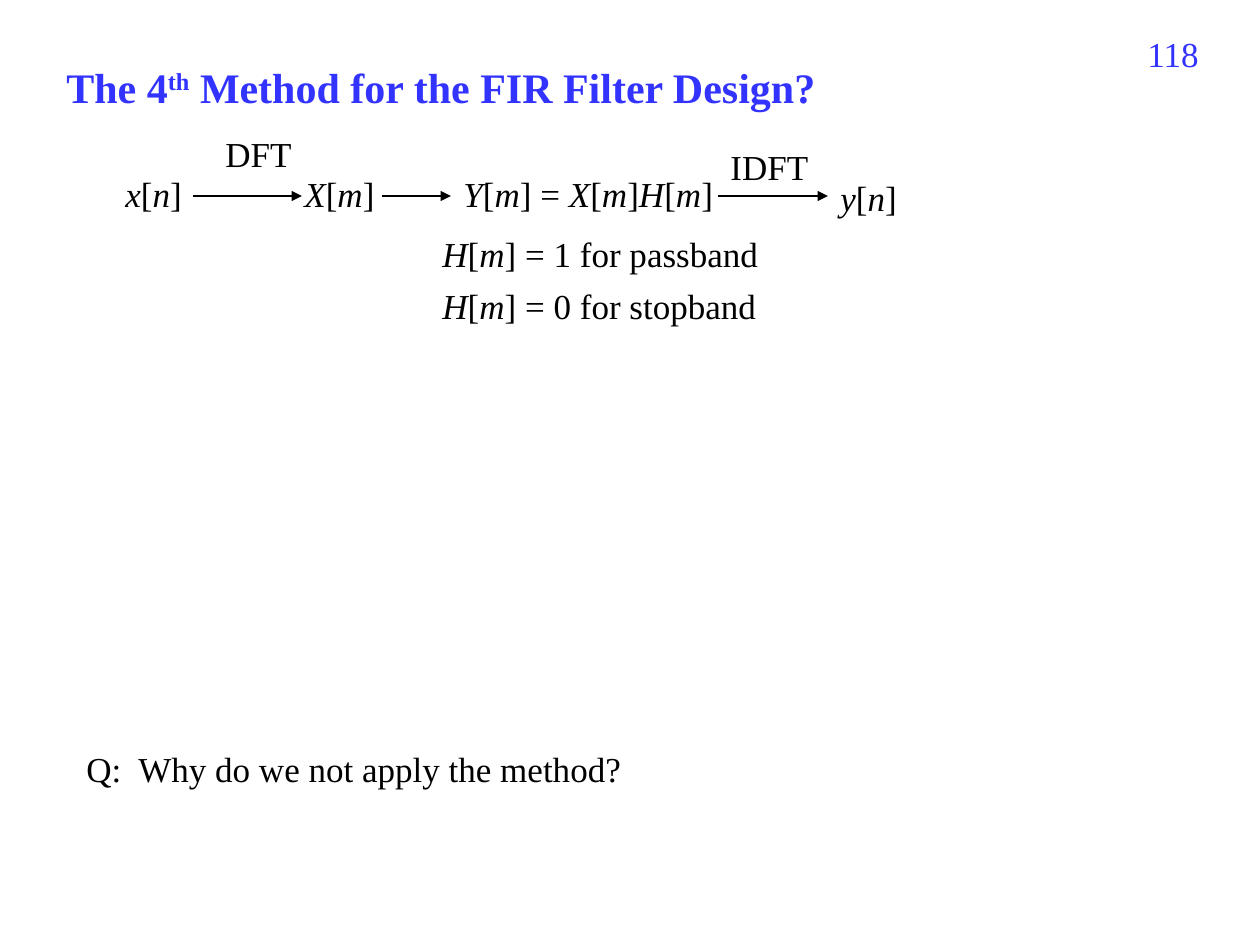
from lxml import etree
from pptx import Presentation
from pptx import util as u
from pptx.dml.color import RGBColor
from pptx.enum import shapes, text
from pptx.oxml.ns import qn

EMU_PER_PX = 914400 / 126
BLUE, BLACK = "3333FF", "000000"


def px(length):
    return u.Emu(round(length * EMU_PER_PX))


def color(hex_code):
    return RGBColor.from_string(hex_code)


def add_text(slide, box, lines, size=20, ink=BLACK, bold=None, align=None,
             before=None, wrap=True, marked="italic"):
    frame = slide.shapes.add_textbox(*map(px, box)).text_frame
    frame.word_wrap = wrap
    for number, line in enumerate(lines):
        paragraph = frame.paragraphs[0] if number == 0 else frame.add_paragraph()
        paragraph.alignment = align
        paragraph.space_before = before
        font = paragraph.font
        font.name, font.size, font.bold = "Times New Roman", u.Pt(size), bold
        font.color.rgb = color(ink)
        for position, part in enumerate(line.split("*")):
            if not part:
                continue
            run = paragraph.add_run()
            run.text = part
            if position % 2 and marked == "italic":
                run.font.italic = True
            elif position % 2:
                run.font._element.set("baseline", "30000")


def add_arrow(slide, start, end, y):
    arrow = slide.shapes.add_connector(
        shapes.MSO_CONNECTOR.STRAIGHT, px(start), px(y), px(end), px(y))
    arrow.line.width = u.Pt(0.75)
    arrow.line.color.rgb = color(BLACK)
    etree.SubElement(arrow.line._get_or_add_ln(), qn("a:tailEnd"), type="triangle")
    etree.SubElement(arrow._element.spPr, qn("a:effectLst"))


def add_header(slide, left, top):
    add_text(slide, (left + 863, top, 294, 66), ["118"], ink=BLUE,
             align=text.PP_ALIGN.RIGHT)
    add_text(slide, (left, top + 29, 1081, 63),
             ["The 4*th* Method for the FIR Filter Design?"],
             size=24, ink=BLUE, bold=True, marked="superscript")


def add_filter_flow(slide, left, top):
    labels = [
        (0, 40, 100, "*x*[*n*]"),
        (100, 0, 100, "DFT"),
        (179, 40, 100, "*X*[*m*]"),
        (338, 40, 287, "*Y*[*m*] = *X*[*m*]*H*[*m*]"),
        (605, 13, 118, "IDFT"),
        (715, 44, 100, "*y*[*n*]"),
    ]
    for x, y, width, label in labels:
        add_text(slide, (left + x, top + y, width, 55), [label])
    for start, end in [(80, 189), (269, 338), (605, 715)]:
        add_arrow(slide, left + start, left + end, top + 70)
    responses = [f"*H*[*m*] = {gain} for {band}"
                 for gain, band in [(1, "passband"), (0, "stopband")]]
    add_text(slide, (left + 317, top + 100, 344, 108), responses,
             before=u.Pt(6), wrap=False)


def add_question(slide, left, top):
    add_text(slide, (left, top, 912, 55), ["Q:  Why do we not apply the method?"])


def main():
    deck = Presentation()
    deck.slide_width, deck.slide_height = px(1260), px(945)
    slide = deck.slides.add_slide(deck.slide_layouts[6])
    add_header(slide, 54, 26)
    add_filter_flow(slide, 113, 126)
    add_question(slide, 74, 741)
    deck.save("out.pptx")


if __name__ == "__main__":
    main()
